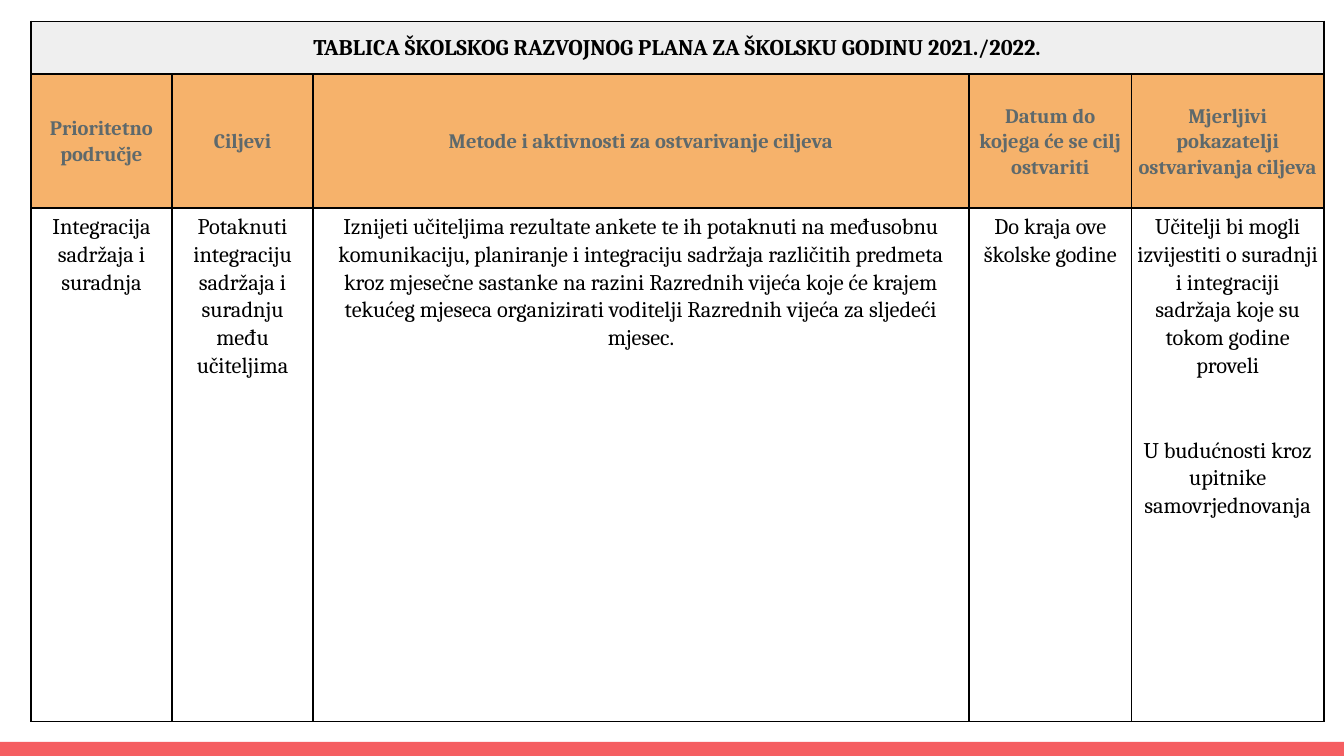
from lxml import etree
from pptx import Presentation
from pptx.dml.color import RGBColor
from pptx.enum.shapes import MSO_SHAPE
from pptx.enum.text import MSO_ANCHOR, PP_ALIGN
from pptx.oxml.ns import qn
from pptx.util import Inches, Pt

RECTANGLE = MSO_SHAPE.RECTANGLE
TOP, MIDDLE = MSO_ANCHOR.TOP, MSO_ANCHOR.MIDDLE
CENTER = PP_ALIGN.CENTER

COLORS = {
    "black": "000000",
    "white": "FFFFFF",
    "banner": "EFEFEF",
    "heading": "F6B26B",
    "heading_text": "5E696C",
    "footer": "F55E61",
}
FONT = "Cambria"
PARAGRAPH_GAP = 30.5
SLIDE_WIDTH = Inches(10)
SLIDE_HEIGHT = SLIDE_WIDTH * 9 // 16
FOOTER_TOP = Inches(5.52)

PLAN_TITLE = "TABLICA ŠKOLSKOG RAZVOJNOG PLANA ZA ŠKOLSKU GODINU 2021./2022."
HEADINGS = [
    "Prioritetno područje",
    "Ciljevi",
    "Metode i aktivnosti za ostvarivanje ciljeva",
    "Datum do kojega će se cilj ostvariti",
    "Mjerljivi pokazatelji ostvarivanja ciljeva",
]
PLAN = [
    ["Integracija sadržaja i suradnja"],
    ["Potaknuti integraciju sadržaja i suradnju među učiteljima"],
    [
        "Iznijeti učiteljima rezultate ankete te ih potaknuti na međusobnu "
        "komunikaciju, planiranje i integraciju sadržaja različitih predmeta "
        "kroz mjesečne sastanke na razini Razrednih vijeća koje će krajem "
        "tekućeg mjeseca organizirati voditelji Razrednih vijeća za sljedeći "
        "mjesec."
    ],
    ["Do kraja ove školske godine"],
    [
        "Učitelji bi mogli izvijestiti o suradnji i integraciji sadržaja koje "
        "su tokom godine proveli",
        "U budućnosti kroz upitnike samovrjednovanja",
    ],
]
COLUMN_WIDTHS = [1.05, 1.05, 4.88, 1.21, 1.43]
ROW_HEIGHTS = [0.39, 1, 3.82]
ROWS = [
    ([[PLAN_TITLE]], dict(fill="banner", color="black", size=12, bold=True, anchor=MIDDLE)),
    ([[heading] for heading in HEADINGS],
     dict(fill="heading", color="heading_text", size=11, bold=True, anchor=MIDDLE)),
    (PLAN, dict(fill="white", color="black", size=12, bold=False, anchor=TOP)),
]


def rgb(name):
    return RGBColor.from_string(COLORS[name])


def add_borders(cell):
    properties = cell._tc.get_or_add_tcPr()
    for side in ("a:lnL", "a:lnR", "a:lnT", "a:lnB"):
        border = etree.SubElement(properties, qn(side), w=str(Pt(1)))
        solid = etree.SubElement(border, qn("a:solidFill"))
        etree.SubElement(solid, qn("a:srgbClr"), val=COLORS["black"])


def format_cell(cell, fill, anchor):
    add_borders(cell)
    cell.fill.solid()
    cell.fill.fore_color.rgb = rgb(fill)
    cell.vertical_anchor = anchor
    cell.margin_left = cell.margin_right = Inches(0.04)
    cell.margin_top = cell.margin_bottom = Inches(0.03)


def write_cell(cell, texts, color, size, bold):
    frame = cell.text_frame
    frame.text = "\n".join(texts)
    for index, paragraph in enumerate(frame.paragraphs):
        paragraph.alignment = CENTER
        paragraph.line_spacing = 1.08
        paragraph.space_before = Pt(PARAGRAPH_GAP if index else 0)
        paragraph.space_after = Pt(8 if index == len(texts) - 1 else 0)
        font = paragraph.font
        font.name, font.size, font.bold = FONT, Pt(size), bold
        font.color.rgb = rgb(color)


def add_plan_table(slide):
    table = slide.shapes.add_table(
        len(ROWS), len(COLUMN_WIDTHS), Inches(0.23), Inches(0.16),
        Inches(sum(COLUMN_WIDTHS)), Inches(sum(ROW_HEIGHTS)),
    ).table
    table.first_row = table.horz_banding = False
    for column, width in zip(table.columns, COLUMN_WIDTHS):
        column.width = Inches(width)
    for row, height, (contents, style) in zip(table.rows, ROW_HEIGHTS, ROWS):
        row.height = Inches(height)
        for cell in row.cells:
            format_cell(cell, style["fill"], style["anchor"])
        for cell, texts in zip(row.cells, contents):
            write_cell(cell, texts, style["color"], style["size"], style["bold"])
    table.cell(0, 0).merge(table.cell(0, len(COLUMN_WIDTHS) - 1))


def main():
    presentation = Presentation()
    presentation.slide_width = SLIDE_WIDTH
    presentation.slide_height = SLIDE_HEIGHT
    slide = presentation.slides.add_slide(presentation.slide_layouts[6])

    footer = slide.shapes.add_shape(
        RECTANGLE, 0, FOOTER_TOP, SLIDE_WIDTH, SLIDE_HEIGHT - FOOTER_TOP)
    footer.shadow.inherit = False
    footer.fill.solid()
    footer.fill.fore_color.rgb = rgb("footer")
    footer.line.fill.background()

    add_plan_table(slide)
    presentation.save("out.pptx")


if __name__ == "__main__":
    main()
